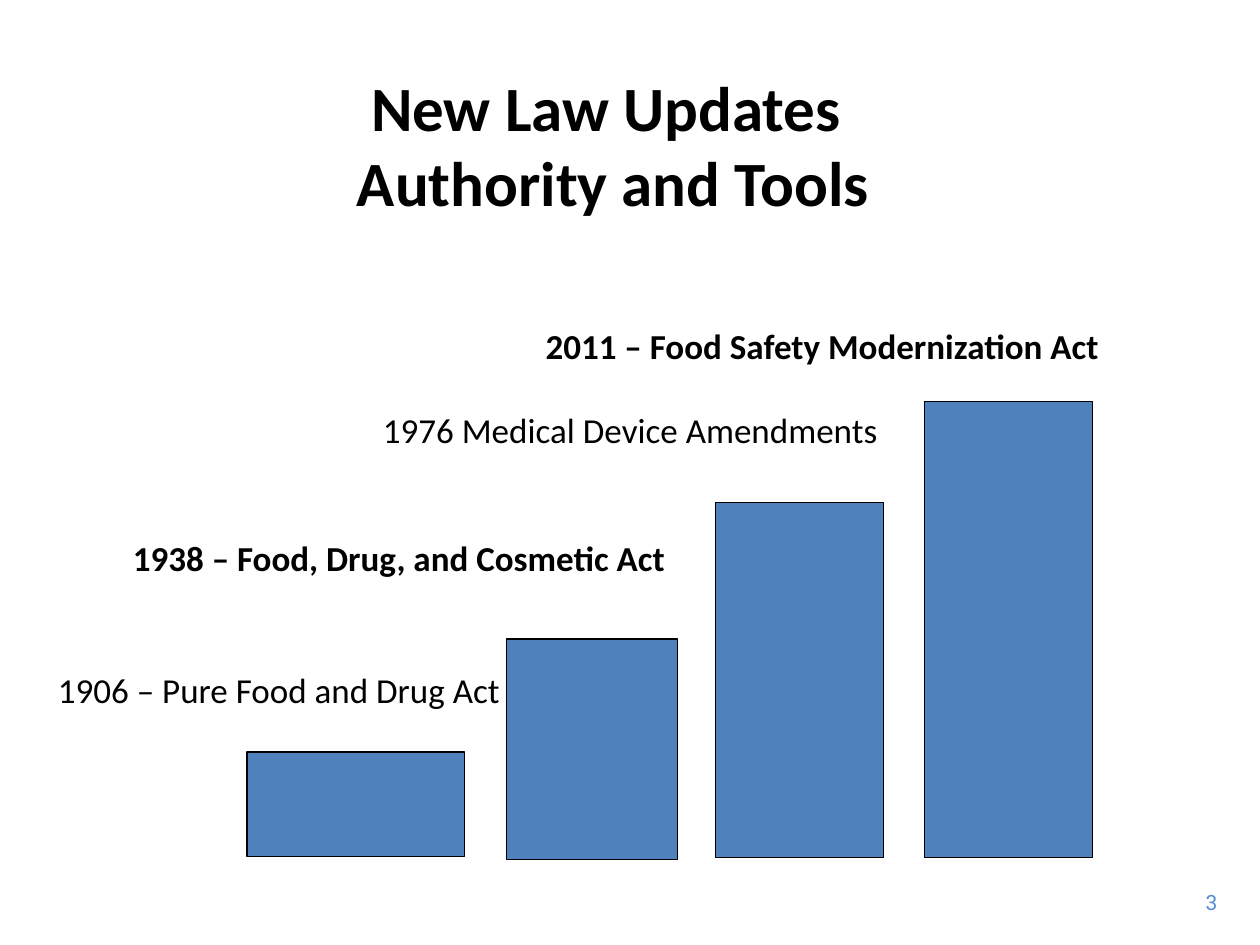
from pptx import Presentation
from pptx.dml.color import RGBColor
from pptx.enum.shapes import MSO_SHAPE
from pptx.enum.text import MSO_ANCHOR, PP_ALIGN
from pptx.util import Cm, Pt

BLACK = RGBColor(0x00, 0x00, 0x00)
BAR_BLUE = RGBColor(0x4F, 0x81, 0xBD)
NUMBER_BLUE = RGBColor(0x55, 0x8E, 0xD5)

LABELS = [
    (11.0, 6.46, "2011 – Food Safety Modernization Act", True),
    (7.72, 8.14, "1976 Medical Device Amendments", False),
    (2.68, 10.72, "1938 – Food, Drug, and Cosmetic Act", True),
    (1.17, 13.38, "1906 – Pure Food and Drug Act", False),
]
BARS = [
    (4.98, 15.16, 4.39, 2.11),
    (10.21, 12.88, 3.45, 4.45),
    (14.43, 10.13, 3.38, 7.16),
    (18.64, 8.1, 3.38, 9.19),
]


def add_run(paragraph, text, size, color=BLACK, bold=False, font="Calibri"):
    """Append a formatted run to a paragraph."""
    run = paragraph.add_run()
    run.text = text
    run.font.name = font
    run.font.size = Pt(size)
    run.font.bold = bold
    run.font.color.rgb = color


def set_title(slide):
    """Place the title placeholder and fill its two lines."""
    title = slide.shapes.title
    title.left, title.top, title.width, title.height = Cm(2.16), Cm(1.45), Cm(20.4), Cm(2.9)
    title.text_frame.vertical_anchor = MSO_ANCHOR.MIDDLE
    paragraph = title.text_frame.paragraphs[0]
    paragraph.alignment = PP_ALIGN.CENTER
    add_run(paragraph, "New Law Updates ", 36, bold=True)
    paragraph.add_line_break()
    add_run(paragraph, "Authority and Tools", 36, bold=True)


def add_text_box(slide, left, top, width, height, alignment):
    """Add a text box without insets and return its paragraph."""
    frame = slide.shapes.add_textbox(Cm(left), Cm(top), Cm(width), Cm(height)).text_frame
    frame.word_wrap = True
    frame.vertical_anchor = MSO_ANCHOR.MIDDLE
    frame.margin_left = frame.margin_right = frame.margin_top = frame.margin_bottom = 0
    paragraph = frame.paragraphs[0]
    paragraph.alignment = alignment
    return paragraph


def add_bar(slide, left, top, width, height):
    """Add one outlined step of the timeline."""
    bar = slide.shapes.add_shape(MSO_SHAPE.RECTANGLE, Cm(left), Cm(top), Cm(width), Cm(height))
    bar.shadow.inherit = False
    bar.fill.solid()
    bar.fill.fore_color.rgb = BAR_BLUE
    bar.line.color.rgb = BLACK
    bar.line.width = Pt(0.75)


def main():
    """Build and save the slide."""
    presentation = Presentation()
    presentation.slide_width, presentation.slide_height = Cm(25.4), Cm(19.05)
    slide = presentation.slides.add_slide(presentation.slide_layouts[5])
    set_title(slide)
    for left, top, text, bold in LABELS:
        paragraph = add_text_box(slide, left, top, 12, 1.02, PP_ALIGN.LEFT)
        add_run(paragraph, text, 20, bold=bold)
    for bar in BARS:
        add_bar(slide, *bar)
    number = add_text_box(slide, 23.75, 17.81, 0.79, 0.76, PP_ALIGN.RIGHT)
    add_run(number, "3", 12, NUMBER_BLUE, font="Roboto")
    presentation.save("out.pptx")


if __name__ == "__main__":
    main()
